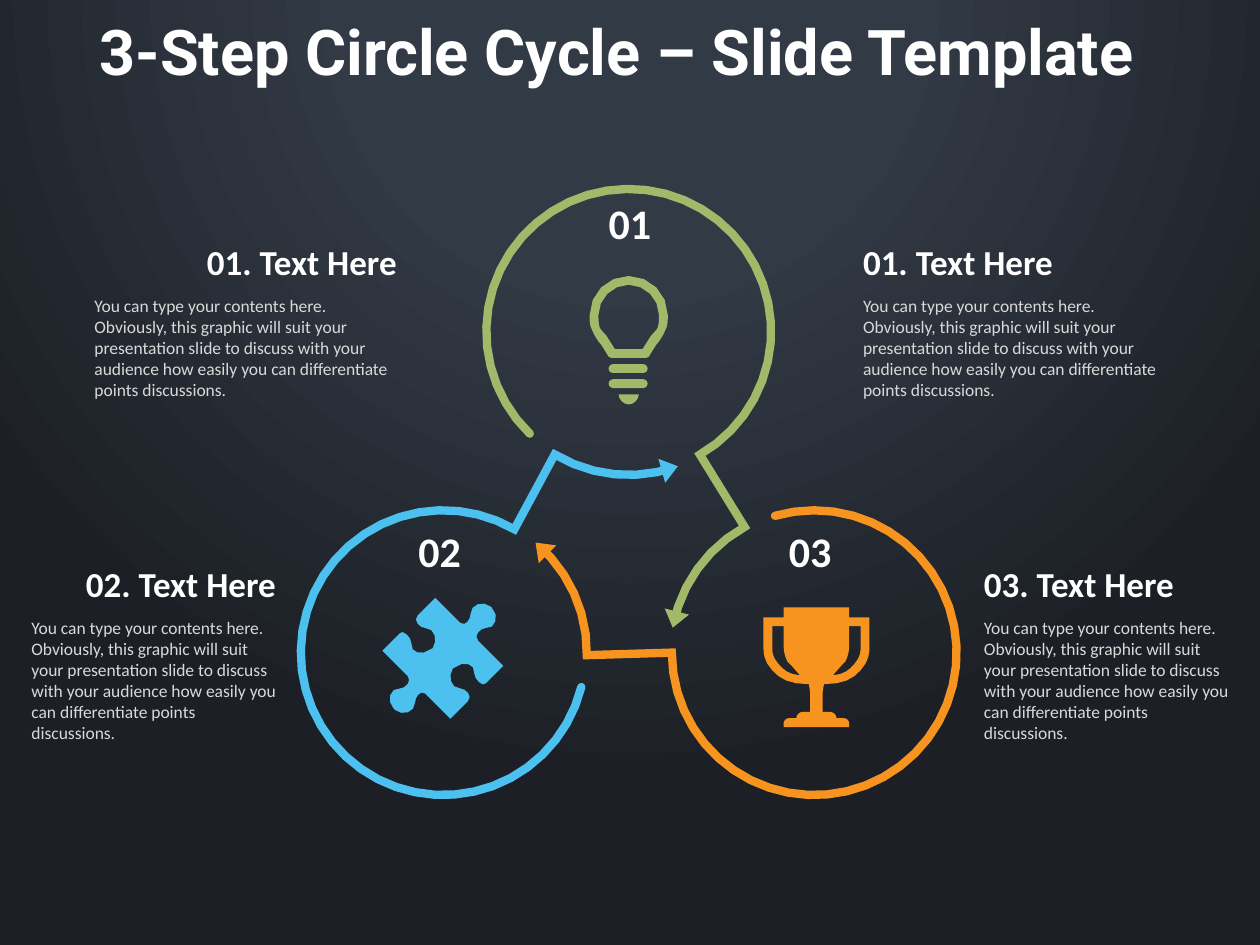
"""Build a three-step circle cycle slide with arrow loops, icons and text cards."""
import math
from lxml import etree
from pptx import Presentation
from pptx import util as u
from pptx.dml.color import RGBColor
from pptx.enum import shapes, text
from pptx.oxml import ns

COLORS = {"green": "A2B969", "orange": "F7931F", "blue": "4CC1EF", "white": "FFFFFF",
          "body": "D9D9D9", "slate": "323A45", "night": "1C2026"}
TITLE = "3-Step Circle Cycle – Slide Template"
BODY = ("You can type your contents here. Obviously, this graphic will suit your presentation "
        "slide to discuss with your audience how easily you can differentiate points discussions.")
LEFT, RIGHT, CENTER = text.PP_ALIGN.LEFT, text.PP_ALIGN.RIGHT, text.PP_ALIGN.CENTER
CARDS = [
    ("03. Text Here", 7.81, 4.41, 1.94, 1.11, LEFT),
    ("02. Text Here", 0.25, 4.41, 1.94, 1.11, RIGHT),
    ("01. Text Here", 6.85, 1.85, 2.4, 0.94, LEFT),
    ("01. Text Here", 0.75, 1.85, 2.4, 0.94, RIGHT),
]
NUMBERS = [("01", 4.8, 1.52), ("02", 3.29, 4.12), ("03", 6.23, 4.12)]

LOOP_COLORS = ["green", "orange", "blue"]
CYCLE_CENTER, CYCLE_RADIUS = complex(4.99, 4.33), 1.7
CIRCLE_RADIUS, ARROW_RADIUS, STROKE = 1.13, 1.14, 4.75

BULB_ORIGIN, BULB_BARS = complex(4.99, 2.19), [2.89, 3.01]
BULB = [
    [(0, 0), (17, 0, 31, 14, 31, 31), (31, 36, 31, 40, 29, 43), (28, 46, 26, 49, 24, 52),
     (21, 55, 18, 61, 16, 64), (14, 65), (0, 65)],
    [(0, 7), (13, 7, 24, 18, 24, 31), (24, 35, 24, 38, 23, 41), (22, 43, 20, 45, 18, 47),
     (11, 58), (0, 58)],
    [(0, 94), (8, 94), (8, 98, 4, 102, 0, 102)],
]
TROPHY_ORIGIN = complex(6.48, 4.82)
TROPHY = [
    [(0, 0), (26, 0), (26, 8), (42, 8), (42, 33), (42, 35, 42, 43, 35, 50),
     (29, 57, 21, 61, 6, 61), (5, 67), (5, 83), (11, 83), (13, 83, 16, 85, 16, 88),
     (22, 88), (24, 88, 26, 90, 26, 92), (26, 95), (0, 95)],
    [(30, 45), (26, 50, 22, 53, 13, 54), (20, 46), (23, 43),
     (25, 39, 26, 35, 26, 31), (26, 15), (35, 15), (35, 34), (35, 34, 35, 40, 30, 45)],
]
PUZZLE_ORIGIN = complex(3.515, 5.225)
PUZZLE_HALF = [
    (6, 48), (20, 34), (24, 30, 18, 24, 14, 24), (6, 24, 4, 14, 8, 8), (10, 7),
    (16, 2, 26, 4, 25, 12), (25, 17, 32, 23, 34, 20), (48, 6), (28, -14),
    (24, -18, 30, -24, 34, -24), (42, -23, 45, -34, 39, -40), (38, -41),
    (32, -46, 22, -43, 22, -35), (22, -31, 18, -25, 14, -28), (-6, -48)]


def color(name):
    return RGBColor.from_string(COLORS[name])


def polar(radius, degrees):
    angle = math.radians(degrees)
    return complex(radius * math.cos(angle), radius * math.sin(angle))


def arc(center, radius, start, end, steps):
    return [center + polar(radius, start + (end - start) * i / steps) for i in range(steps + 1)]


def flatten(path, steps=4):
    points = []
    for item in path:
        knots = [complex(x, y) / 100 for x, y in zip(item[::2], item[1::2])]
        if len(knots) == 1:
            points += knots
            continue
        start, (first, second, end) = points[-1], knots
        for i in range(1, steps + 1):
            t = i / steps
            s = 1 - t
            points.append(s**3 * start + 3 * s * s * t * first + 3 * s * t * t * second + t**3 * end)
    return points


def mirrored(halves):
    contours = []
    for half in map(flatten, halves):
        other = [-point.conjugate() for point in reversed(half)]
        contours += [half + other] if half[0].real == 0 else [half, other]
    return contours


def paint(shape, name):
    shape.fill.solid()
    shape.fill.fore_color.rgb = color(name)
    shape.line.fill.background()


def add_outline(slide, contours, origin, close=True):
    builder = None
    for contour in contours:
        corners = [(u.Inches((origin + p).real), u.Inches((origin + p).imag)) for p in contour]
        if builder is None:
            builder = slide.shapes.build_freeform(*corners[0], scale=1.0)
        else:
            builder.move_to(*corners[0])
        builder.add_line_segments(corners[1:], close=close)
    shape = builder.convert_to_shape()
    shape.shadow.inherit = False
    return shape


def write(frame, words, size, name, font="Calibri", bold=True, align=LEFT):
    paragraph = frame.paragraphs[0]
    paragraph.alignment = align
    run = paragraph.add_run()
    run.text = words
    run.font.name, run.font.size, run.font.bold = font, u.Pt(size), bold
    run.font.color.rgb = color(name)
    return paragraph


def add_text(slide, box, words, size, name, anchor, **style):
    frame = slide.shapes.add_textbox(*map(u.Inches, box)).text_frame
    frame.word_wrap = True
    frame.auto_size = text.MSO_AUTO_SIZE.SHAPE_TO_FIT_TEXT
    frame.vertical_anchor = anchor
    frame.margin_left = frame.margin_right = 0
    write(frame, words, size, name, **style)


def set_background(slide):
    slide.background.fill.gradient()
    gradient = slide.element.find(".//" + ns.qn("a:gradFill"))
    for child in list(gradient):
        gradient.remove(child)
    stops = etree.SubElement(gradient, ns.qn("a:gsLst"))
    for position, name in [(0, "slate"), (35, "slate"), (100, "night")]:
        stop = etree.SubElement(stops, ns.qn("a:gs"), pos=str(position * 1000))
        etree.SubElement(stop, ns.qn("a:srgbClr"), val=COLORS[name])
    circle = etree.SubElement(gradient, ns.qn("a:path"), path="circle")
    etree.SubElement(circle, ns.qn("a:fillToRect"), l="50000", t="-80000", r="50000", b="180000")


def add_title(slide):
    title = slide.shapes.title
    title.left, title.top, title.width, title.height = map(u.Inches, (0.69, 0.12, 9.31, 0.81))
    frame = title.text_frame
    frame.vertical_anchor = text.MSO_ANCHOR.TOP
    frame.margin_right = 0
    write(frame, TITLE, 36, "white", font="Roboto").line_spacing = 0.9


def add_loops(slide):
    first, second = polar(CYCLE_RADIUS, -90), polar(CYCLE_RADIUS, 30)
    path = (arc(first, CIRCLE_RADIUS, 134, 420, 36)
            + arc(second, ARROW_RADIUS, 241, 190, 6))
    for index, name in enumerate(LOOP_COLORS):
        turned = [point * polar(1, 120 * index) for point in path]
        loop = add_outline(slide, [turned], CYCLE_CENTER, close=False)
        loop.fill.background()
        loop.line.color.rgb = color(name)
        loop.line.width = u.Pt(STROKE)
        line = loop.element.find(".//" + ns.qn("a:ln"))
        line.set("cap", "rnd")
        etree.SubElement(line, ns.qn("a:miter"), lim="800000")
        etree.SubElement(line, ns.qn("a:tailEnd"), type="triangle", w="med", len="sm")


def add_icons(slide):
    paint(add_outline(slide, mirrored(BULB), BULB_ORIGIN), "green")
    for top in BULB_BARS:
        bar = slide.shapes.add_shape(shapes.MSO_SHAPE.ROUNDED_RECTANGLE,
                                     *map(u.Inches, (4.83, top, 0.31, 0.07)))
        bar.adjustments[0] = 0.5
        bar.shadow.inherit = False
        paint(bar, "green")
    half = flatten(PUZZLE_HALF)
    paint(add_outline(slide, [half + [-point for point in half]], PUZZLE_ORIGIN), "blue")
    paint(add_outline(slide, mirrored(TROPHY), TROPHY_ORIGIN), "orange")


def main():
    presentation = Presentation()
    presentation.slide_width, presentation.slide_height = u.Inches(10), u.Inches(7.5)
    slide = presentation.slides.add_slide(presentation.slide_layouts[5])
    set_background(slide)
    add_title(slide)
    anchors = text.MSO_ANCHOR
    for heading, left, top, width, height, align in CARDS:
        add_text(slide, (left, top, width, 0.44), heading, 20, "white", anchors.BOTTOM, align=align)
        add_text(slide, (left, top + 0.44, width, height), BODY, 10, "body", anchors.TOP, bold=False)
    add_loops(slide)
    for number, left, top in NUMBERS:
        add_text(slide, (left, top, 0.4, 0.5), number, 24, "white", anchors.MIDDLE, align=CENTER)
    add_icons(slide)
    presentation.save("out.pptx")


if __name__ == "__main__":
    main()
